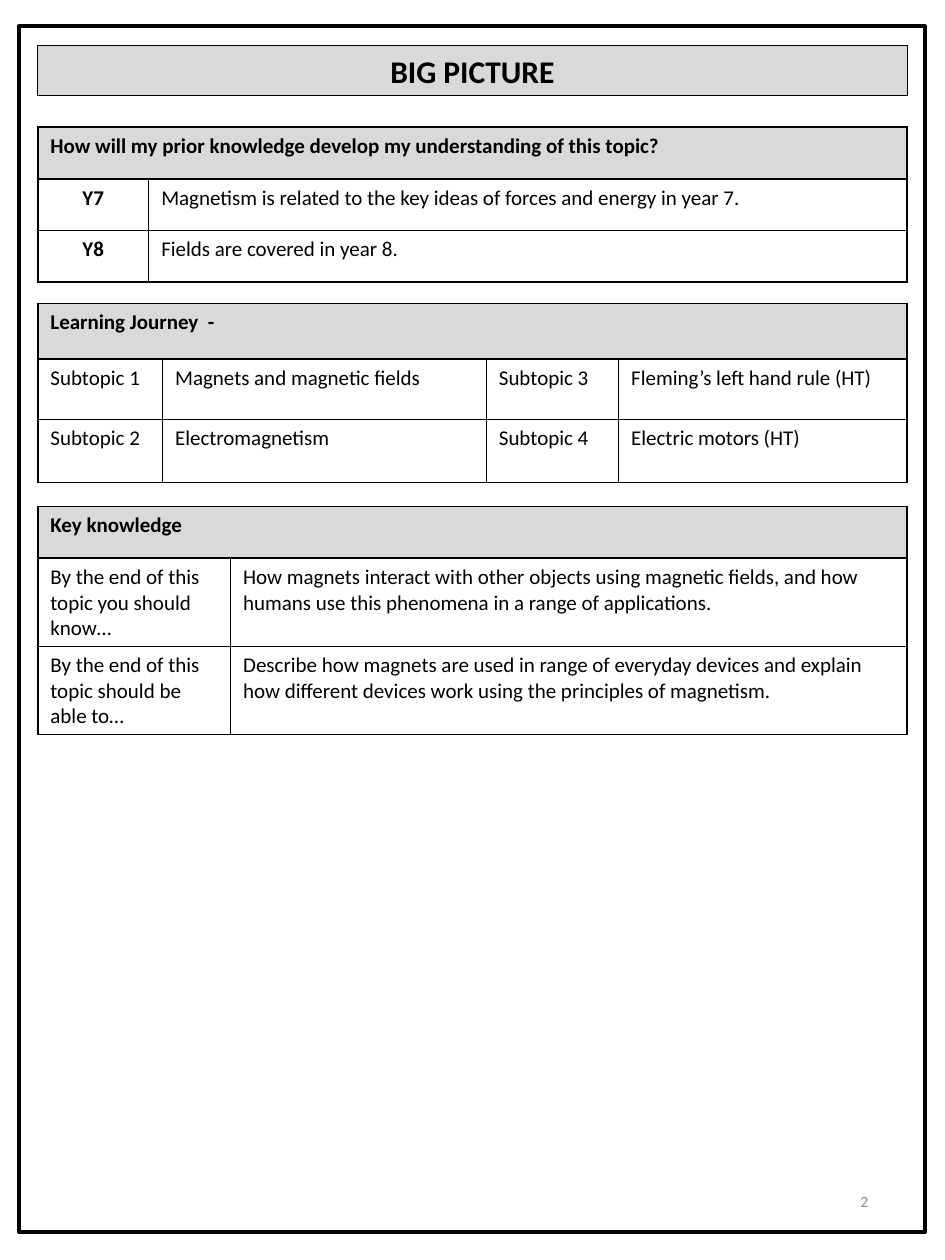
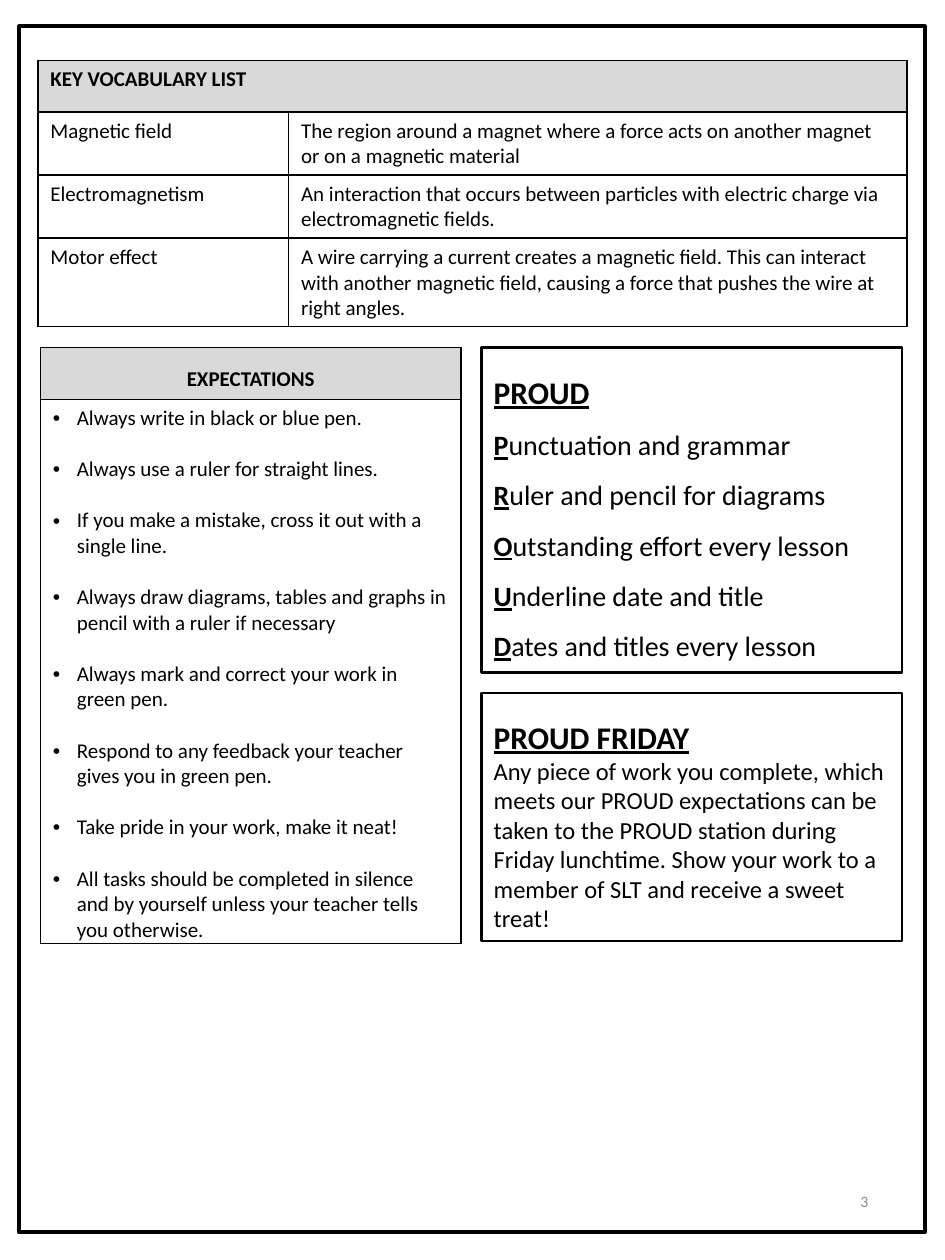
from lxml import etree
from pptx import Presentation
from pptx import util as u
from pptx.dml.color import RGBColor
from pptx.enum import shapes, text
from pptx.oxml import ns

BLACK = RGBColor(0x00, 0x00, 0x00)
WHITE = RGBColor(0xFF, 0xFF, 0xFF)
BAND = RGBColor(0xD9, 0xD9, 0xD9)
NUMBER_GREY = RGBColor(0x8C, 0x8C, 0x8C)
FONT = "Calibri"
BODY_SIZE, HEADING_SIZE = 12, 18

LEFT, WIDTH = 0.3, 6.9
HALF_LEFT, HALF_WIDTH, HALF_GAP, HALF_TOP = 0.32, 3.34, 0.16, 2.76
CENTRE = text.PP_ALIGN.CENTER

TITLE = "BIG PICTURE"
PRIOR_KNOWLEDGE = [
    ["How will my prior knowledge develop my understanding of this topic?"],
    ["Y7", "Magnetism is related to the key ideas of forces and energy in year 7."],
    ["Y8", "Fields are covered in year 8."],
]
JOURNEY = [
    ["Learning Journey  -"],
    ["Subtopic 1", "Magnets and magnetic fields",
     "Subtopic 3", "Fleming’s left hand rule (HT)"],
    ["Subtopic 2", "Electromagnetism", "Subtopic 4", "Electric motors (HT)"],
]
KEY_KNOWLEDGE = [
    ["Key knowledge"],
    ["By the end of this topic you should know…",
     "How magnets interact with other objects using magnetic fields, and how "
     "humans use this phenomena in a range of applications."],
    ["By the end of this topic should be able to…",
     "Describe how magnets are used in range of everyday devices and explain "
     "how different devices work using the principles of magnetism."],
]
VOCABULARY = [
    ["KEY VOCABULARY LIST"],
    ["Magnetic field",
     "The region around a magnet where a force acts on another magnet\n"
     "or on a magnetic material"],
    ["Electromagnetism",
     "An interaction that occurs between particles with electric charge via "
     "electromagnetic fields."],
    ["Motor effect",
     "A wire carrying a current creates a magnetic field. This can interact "
     "with another magnetic field, causing a force that pushes the wire at "
     "right angles."],
]
EXPECTATIONS = [
    "Always write in black or blue pen.",
    "Always use a ruler for straight lines.",
    "If you make a mistake, cross it out with a single line.",
    "Always draw diagrams, tables and graphs in pencil with a ruler if necessary",
    "Always mark and correct your work in green pen.",
    "Respond to any feedback your teacher gives you in green pen.",
    "Take pride in your work, make it neat!",
    "All tasks should be completed in silence and by yourself unless your "
    "teacher tells you otherwise.",
]
PROUD = [
    "Punctuation and grammar",
    "Ruler and pencil for diagrams",
    "Outstanding effort every lesson",
    "Underline date and title",
    "Dates and titles every lesson",
]
PROUD_FRIDAY = (
    "Any piece of work you complete, which meets our PROUD expectations can be "
    "taken to the PROUD station during Friday lunchtime. Show your work to a "
    "member of SLT and receive a sweet treat!")


def inches(*values):
    return [u.Inches(v) for v in values]


def style_run(r, size=BODY_SIZE, bold=False, underline=False, color=BLACK):
    r.font.name = FONT
    r.font.size = u.Pt(size)
    r.font.bold = bold
    r.font.underline = underline
    r.font.color.rgb = color


def style_paragraphs(tf, align=None, **font):
    for p in tf.paragraphs:
        p.alignment = align
        for r in p.runs:
            style_run(r, **font)


def set_line(sp, width):
    sp.line.color.rgb = BLACK
    sp.line.width = u.Pt(width)


def add_box(s, at, line_width):
    sp = s.shapes.add_shape(shapes.MSO_SHAPE.RECTANGLE, *inches(*at))
    sp.shadow.inherit = False
    sp.fill.background()
    set_line(sp, line_width)
    return sp


def add_page(prs, layout, number):
    """Add a slide with the page frame and its page number."""
    s = prs.slides.add_slide(prs.slide_layouts[layout])
    add_box(s, (0.15, 0.21, 7.19, 9.57), 2.25)
    tf = s.shapes.add_textbox(*inches(5.3, 9.27, 1.69, 0.53)).text_frame
    tf.word_wrap = True
    tf.vertical_anchor = text.MSO_ANCHOR.MIDDLE
    tf.text = str(number)
    style_paragraphs(tf, text.PP_ALIGN.RIGHT, size=9, color=NUMBER_GREY)
    return s


def add_borders(cell):
    tc_pr = cell._tc.get_or_add_tcPr()
    for i, side in enumerate(("a:lnL", "a:lnR", "a:lnT", "a:lnB")):
        ln = etree.Element(ns.qn(side), w=str(u.Pt(1)))
        fill = etree.SubElement(ln, ns.qn("a:solidFill"))
        etree.SubElement(fill, ns.qn("a:srgbClr"), val=str(BLACK))
        tc_pr.insert(i, ln)


def add_grid(s, left, top, cols, heights, rows, body_fill=None):
    """Add a bordered table whose first row is one shaded heading."""
    table = s.shapes.add_table(len(rows), len(cols), *inches(
        left, top, sum(cols), sum(heights))).table
    table.first_row = table.horz_banding = False
    for column, width in zip(table.columns, cols):
        column.width = u.Inches(width)
    for row, height in zip(table.rows, heights):
        row.height = u.Inches(height)
    if len(cols) > 1:
        table.cell(0, 0).merge(table.cell(0, len(cols) - 1))
    for i, row in enumerate(table.rows):
        fill = body_fill if i else BAND
        for cell, words in zip(row.cells, rows[i]):
            cell.text = words
            style_paragraphs(cell.text_frame, bold=i == 0)
        for cell in row.cells:
            if fill is None:
                cell.fill.background()
            else:
                cell.fill.solid()
                cell.fill.fore_color.rgb = fill
            add_borders(cell)
    return table


def add_bullet(p):
    p_pr = p._p.get_or_add_pPr()
    p_pr.set("marL", str(u.Inches(0.19)))
    p_pr.set("indent", str(-u.Inches(0.19)))
    etree.SubElement(p_pr, ns.qn("a:buFont"), typeface="Arial")
    etree.SubElement(p_pr, ns.qn("a:buChar"), char="•")


def add_proud_box(s, top, height, heading):
    sp = add_box(s, (HALF_LEFT + HALF_WIDTH + HALF_GAP, top, HALF_WIDTH, height), 1.5)
    tf = sp.text_frame
    tf.word_wrap = True
    tf.vertical_anchor = text.MSO_ANCHOR.TOP
    tf.text = heading
    style_paragraphs(tf, text.PP_ALIGN.LEFT, size=HEADING_SIZE, bold=True, underline=True)
    tf.paragraphs[0].line_spacing = 1.5
    return tf


def add_left_paragraph(tf):
    p = tf.add_paragraph()
    p.alignment = text.PP_ALIGN.LEFT
    return p


def build_big_picture(prs):
    s = add_page(prs, 5, 2)
    title = s.shapes.title
    title.left, title.top, title.width, title.height = inches(LEFT, 0.36, WIDTH, 0.4)
    title.fill.solid()
    title.fill.fore_color.rgb = BAND
    set_line(title, 0.75)
    title.text_frame.text = TITLE
    style_paragraphs(title.text_frame, CENTRE, size=HEADING_SIZE, bold=True)

    prior = add_grid(s, LEFT, 1.01, (0.88, 6.02), [0.41] * 3, PRIOR_KNOWLEDGE, WHITE)
    for i in (1, 2):
        style_paragraphs(prior.cell(i, 0).text_frame, CENTRE, bold=True)
    add_grid(s, LEFT, 2.41, (0.99, 2.57, 1.05, 2.29), (0.44, 0.48, 0.5), JOURNEY)
    add_grid(s, LEFT, 4.02, (1.53, 5.37), (0.41, 0.7, 0.7), KEY_KNOWLEDGE)


def build_vocabulary(prs):
    s = add_page(prs, 6, 3)
    add_grid(s, LEFT, 0.48, (1.99, 4.91), (0.41, 0.5, 0.5, 0.7), VOCABULARY)

    rules = add_grid(s, HALF_LEFT, HALF_TOP, (HALF_WIDTH,), (0.41, 4.3),
                     [["EXPECTATIONS"], ["\n".join(EXPECTATIONS)]])
    heading = rules.cell(0, 0).text_frame.paragraphs[0]
    heading.alignment = CENTRE
    heading.line_spacing = 1.5
    for i, p in enumerate(rules.cell(1, 0).text_frame.paragraphs):
        if i:
            p.space_before = u.Pt(14.6)
        add_bullet(p)

    tf = add_proud_box(s, HALF_TOP, 2.58, "PROUD")
    for line in PROUD:
        p = add_left_paragraph(tf)
        p.line_spacing = 1.5
        for words, initial in ((line[0], True), (line[1:], False)):
            r = p.add_run()
            r.text = words
            style_run(r, 16, bold=initial, underline=initial)

    p = add_left_paragraph(add_proud_box(s, 5.5, 1.97, "PROUD FRIDAY"))
    p.text = PROUD_FRIDAY
    style_run(p.runs[0], 14)


def main():
    prs = Presentation()
    prs.slide_width, prs.slide_height = inches(7.5, 10)
    build_big_picture(prs)
    build_vocabulary(prs)
    prs.save("out.pptx")


if __name__ == "__main__":
    main()
